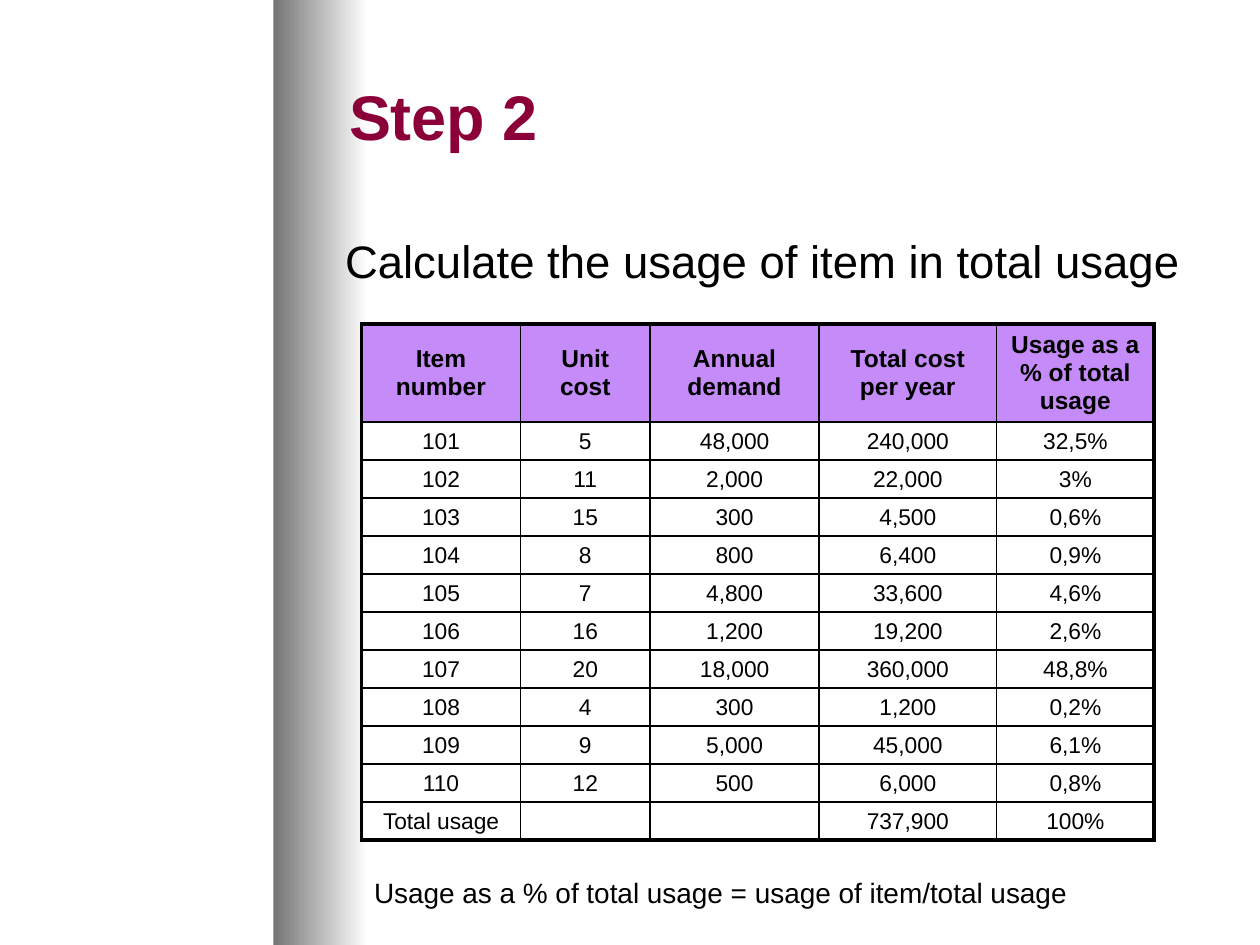
from lxml import etree
from pptx import Presentation
from pptx import util as u
from pptx.dml.color import RGBColor
from pptx.enum import shapes, text
from pptx.oxml import ns

BLACK = RGBColor(0x00, 0x00, 0x00)
WHITE = RGBColor(0xFF, 0xFF, 0xFF)
BAND_GREY = RGBColor(0x75, 0x75, 0x75)
MAROON = RGBColor(0x8C, 0x00, 0x39)
LILAC = RGBColor(0xC5, 0x8B, 0xF9)

SLIDE_WIDTH, SLIDE_HEIGHT = 10, 7.5
COLUMN_WIDTHS = [1.26, 1.03, 1.34, 1.41, 1.25]
HEADER_HEIGHT, TABLE_HEIGHT = 0.75, 4.07
OUTER, INNER = 2.25, 1

TITLE = {"size": u.Pt(36), "bold": True, "color": MAROON}
LEAD = {"size": u.Pt(26), "bold": False, "color": BLACK}
NOTE = {"size": u.Pt(16), "bold": False, "color": BLACK}
HEADING = {"size": u.Pt(14), "bold": True, "color": BLACK}
VALUE = {"size": u.Pt(13), "bold": False, "color": BLACK}

USAGE = [
    ["Item number", "Unit cost", "Annual demand", "Total cost per year",
     "Usage as a % of total usage"],
    ["101", "5", "48,000", "240,000", "32,5%"],
    ["102", "11", "2,000", "22,000", "3%"],
    ["103", "15", "300", "4,500", "0,6%"],
    ["104", "8", "800", "6,400", "0,9%"],
    ["105", "7", "4,800", "33,600", "4,6%"],
    ["106", "16", "1,200", "19,200", "2,6%"],
    ["107", "20", "18,000", "360,000", "48,8%"],
    ["108", "4", "300", "1,200", "0,2%"],
    ["109", "9", "5,000", "45,000", "6,1%"],
    ["110", "12", "500", "6,000", "0,8%"],
    ["Total usage", "", "", "737,900", "100%"],
]


def box(left, top, width, height):
    return [u.Inches(length) for length in (left, top, width, height)]


def write(frame, wording, style, align=text.PP_ALIGN.LEFT):
    paragraph = frame.paragraphs[0]
    paragraph.alignment = align
    if not wording:
        # The end mark keeps an empty cell from growing to the default size
        end_mark = etree.SubElement(paragraph._p, ns.qn("a:endParaRPr"))
        end_mark.set("sz", str(int(style["size"].pt * 100)))
        return
    run = paragraph.add_run()
    run.text = wording
    run.font.name = "Arial"
    for name, setting in style.items():
        if name == "color":
            run.font.color.rgb = setting
        else:
            setattr(run.font, name, setting)


def add_side_band(slide):
    """Grey fade that lies behind everything else."""
    band = slide.shapes.add_shape(shapes.MSO_SHAPE.RECTANGLE,
                                  *box(2.17, 0, 0.75, SLIDE_HEIGHT))
    band.shadow.inherit = False
    band.line.fill.background()
    band.fill.gradient()
    band.fill.gradient_angle = 0
    for stop, colour in zip(band.fill.gradient_stops, (BAND_GREY, WHITE)):
        stop.color.rgb = colour
    slide.shapes._spTree.insert(2, band._element)


def place_title(slide, wording):
    title = slide.shapes.title
    title.left, title.top, title.width, title.height = box(2.67, 0.25, 7, 1.33)
    title.text_frame.vertical_anchor = text.MSO_ANCHOR.MIDDLE
    write(title.text_frame, wording, TITLE)


def add_text(slide, place, wording, style):
    frame = slide.shapes.add_textbox(*box(*place)).text_frame
    frame.word_wrap = True
    write(frame, wording, style)


def set_borders(cell, widths):
    properties = cell._tc.get_or_add_tcPr()
    for side, width in widths.items():
        line = etree.SubElement(properties, ns.qn(f"a:ln{side}"),
                                w=str(u.Pt(width)))
        fill = etree.SubElement(line, ns.qn("a:solidFill"))
        etree.SubElement(fill, ns.qn("a:srgbClr"), val=str(BLACK))


def fill_cell(cell, wording, is_header):
    cell.vertical_anchor = text.MSO_ANCHOR.MIDDLE
    cell.margin_top = cell.margin_bottom = u.Inches(0.04)
    write(cell.text_frame, wording, HEADING if is_header else VALUE,
          text.PP_ALIGN.CENTER)
    if is_header:
        cell.fill.solid()
        cell.fill.fore_color.rgb = LILAC
    else:
        cell.fill.background()


def add_usage_table(slide):
    last_row, last_column = len(USAGE) - 1, len(COLUMN_WIDTHS) - 1
    table = slide.shapes.add_table(
        len(USAGE), len(COLUMN_WIDTHS),
        *box(2.87, 2.57, sum(COLUMN_WIDTHS), TABLE_HEIGHT)).table
    table.first_row = table.horz_banding = False
    for column, width in zip(table.columns, COLUMN_WIDTHS):
        column.width = u.Inches(width)
    item_height = (TABLE_HEIGHT - HEADER_HEIGHT) / last_row
    for r, values in enumerate(USAGE):
        table.rows[r].height = u.Inches(item_height if r else HEADER_HEIGHT)
        for c, wording in enumerate(values):
            cell = table.cell(r, c)
            on_edge = {"L": c == 0, "R": c == last_column,
                       "T": r == 0, "B": r == last_row}
            set_borders(cell, {side: OUTER if outer else INNER
                               for side, outer in on_edge.items()})
            fill_cell(cell, wording, is_header=r == 0)


def main():
    deck = Presentation()
    deck.slide_width = u.Inches(SLIDE_WIDTH)
    deck.slide_height = u.Inches(SLIDE_HEIGHT)
    slide = deck.slides.add_slide(deck.slide_layouts.get_by_name("Title Only"))
    add_side_band(slide)
    place_title(slide, "Step 2")
    add_text(slide, (2.64, 1.8, 7, 0.6),
             "Calculate the usage of item in total usage", LEAD)
    add_usage_table(slide)
    add_text(slide, (2.87, 6.9, 6.38, 0.37),
             "Usage as a % of total usage = usage of item/total usage", NOTE)
    deck.save("out.pptx")


if __name__ == "__main__":
    main()
